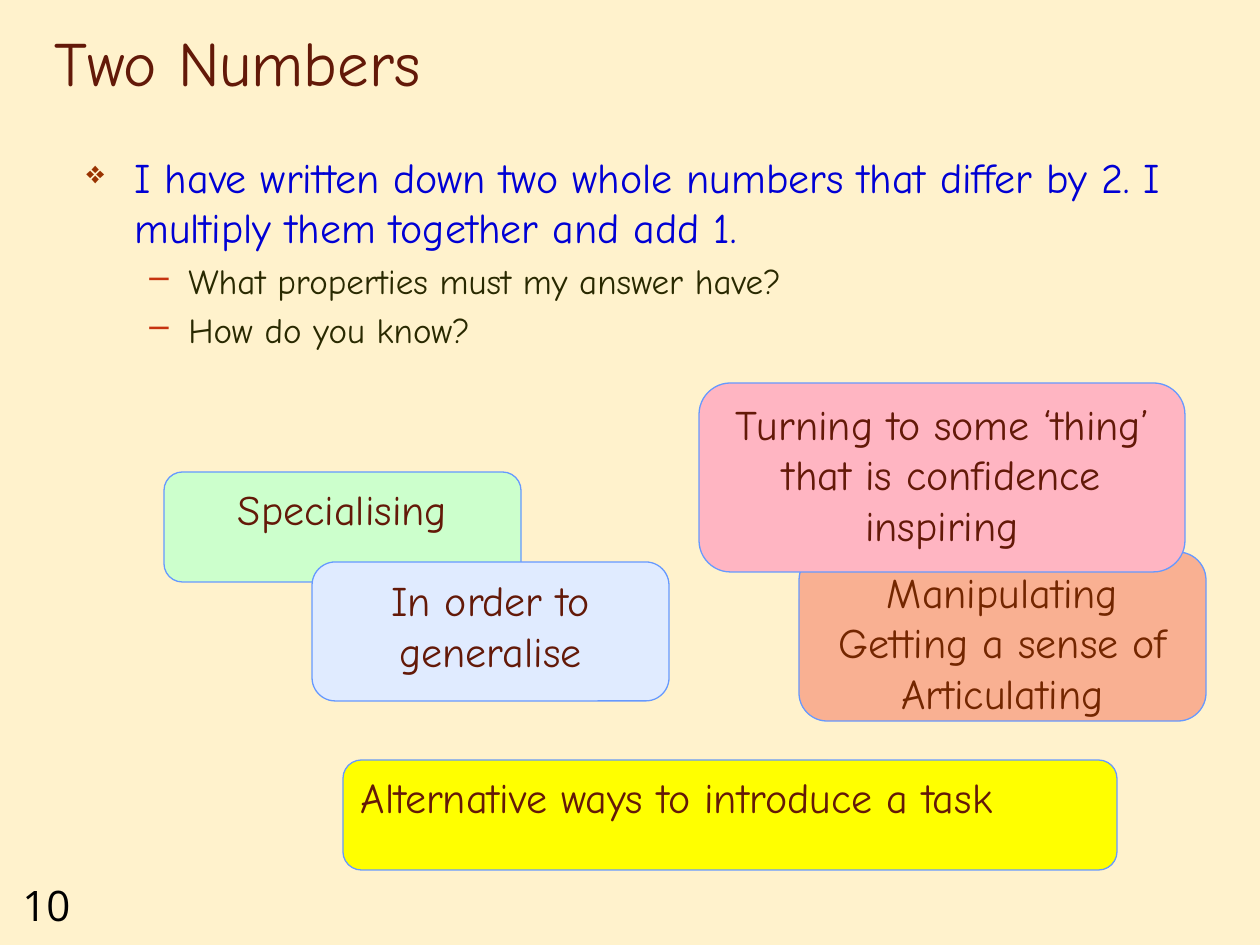
from dataclasses import dataclass

from lxml.etree import SubElement
from pptx import Presentation
from pptx.dml.color import RGBColor
from pptx.enum.shapes import MSO_SHAPE as Shape
from pptx.enum.text import MSO_ANCHOR as Anchor, PP_ALIGN as Align
from pptx.oxml.ns import qn
from pptx.util import Pt

EMU_PER_PX = 914400 / 126


def px(length):
    return round(length * EMU_PER_PX)


def rgb(code):
    return RGBColor.from_string(code)


@dataclass(frozen=True)
class Theme:
    font: str = "Comic Neue"
    number_font: str = "Open Sans"
    title_size: int = 36
    text_size: int = 24
    detail_size: int = 20
    background: str = "FFF2CC"
    brown: str = "631908"
    rust: str = "732600"
    blue: str = "0000D4"
    olive: str = "292900"
    black: str = "000000"
    diamond: str = "993300"
    dash: str = "C6330F"
    outline: str = "6699FF"
    green: str = "CCFFCC"
    orange: str = "F9B092"
    pink: str = "FFB5C2"
    pale_blue: str = "E0EBFF"
    yellow: str = "FFFF00"


def write(para, text, *, size, color, font, align=Align.LEFT, before=0):
    para.alignment = align
    para.space_before = Pt(before)
    span = para.add_run()
    span.text = text
    span.font.name = font
    span.font.size = Pt(size)
    span.font.color.rgb = rgb(color)


def add_bullet(para, char, *, color, margin, hanging, percent=100):
    """Put a coloured bullet before a paragraph, with a hanging indent in px."""
    props = para._p.get_or_add_pPr()
    props.set("marL", str(px(margin)))
    props.set("indent", str(-px(hanging)))
    SubElement(SubElement(props, qn("a:buClr")), qn("a:srgbClr"), val=color)
    SubElement(props, qn("a:buSzPct"), val=str(percent * 1000))
    SubElement(props, qn("a:buChar"), char=char)


class SlideBuilder:
    def __init__(self, page, theme):
        self.page = page
        self.theme = theme
        fill = page.background.fill
        fill.solid()
        fill.fore_color.rgb = rgb(theme.background)

    def text_box(self, area, anchor=Anchor.TOP):
        frame = self.page.shapes.add_textbox(*map(px, area)).text_frame
        frame.word_wrap = True
        frame.vertical_anchor = anchor
        return frame

    def label(self, area, text, *, size, color, font, anchor=Anchor.TOP):
        para = self.text_box(area, anchor).paragraphs[0]
        write(para, text, size=size, color=color, font=font)

    def question(self, area, task, prompts):
        theme = self.theme
        frame = self.text_box(area)
        para = frame.paragraphs[0]
        write(para, task, size=theme.text_size, color=theme.blue, font=theme.font)
        add_bullet(para, "❖", color=theme.diamond, margin=48, hanging=48, percent=75)
        for prompt in prompts:
            para = frame.add_paragraph()
            para.level = 1
            write(para, prompt, size=theme.detail_size, color=theme.olive,
                  font=theme.font, before=4)
            add_bullet(para, "–", color=theme.dash, margin=102, hanging=39)

    def card(self, area, lines, fill, *, color=None, align=Align.CENTER):
        theme = self.theme
        box = self.page.shapes.add_shape(Shape.ROUNDED_RECTANGLE, *map(px, area))
        box.shadow.inherit = False
        box.fill.solid()
        box.fill.fore_color.rgb = rgb(fill)
        box.line.color.rgb = rgb(theme.outline)
        box.line.width = Pt(0.75)
        frame = box.text_frame
        frame.word_wrap = True
        frame.vertical_anchor = Anchor.TOP
        for index, line in enumerate(lines):
            para = frame.add_paragraph() if index else frame.paragraphs[0]
            write(para, line, size=theme.text_size, color=color or theme.brown,
                  font=theme.font, align=align)


def main():
    deck = Presentation()
    deck.slide_width, deck.slide_height = px(1260), px(945)
    theme = Theme()
    slide = SlideBuilder(deck.slides.add_slide(deck.slide_layouts[6]), theme)

    slide.label((10, 873, 95, 63), "10", size=theme.text_size,
                color=theme.black, font=theme.number_font)
    slide.label((42, 21, 1071, 84), "Two Numbers", size=theme.title_size,
                color=theme.brown, font=theme.font, anchor=Anchor.BOTTOM)
    slide.question(
        (74, 145, 1111, 248),
        "I have written down two whole numbers that differ by 2. "
        "I multiply them together and add 1.",
        ["What properties must my answer have?", "How do you know?"],
    )
    slide.card((164, 472, 357, 110), ["Specialising"], theme.green)
    slide.card((799, 552, 407, 169),
               ["Manipulating", "Getting a sense of", "Articulating"],
               theme.orange, color=theme.rust)
    slide.card((699, 383, 486, 189),
               ["Turning to some ‘thing’ that is confidence inspiring"], theme.pink)
    slide.card((312, 562, 357, 139), ["In order to generalise"], theme.pale_blue)
    slide.card((343, 760, 774, 110), ["Alternative ways to introduce a task"],
               theme.yellow, align=Align.LEFT)
    deck.save("out.pptx")


if __name__ == "__main__":
    main()
